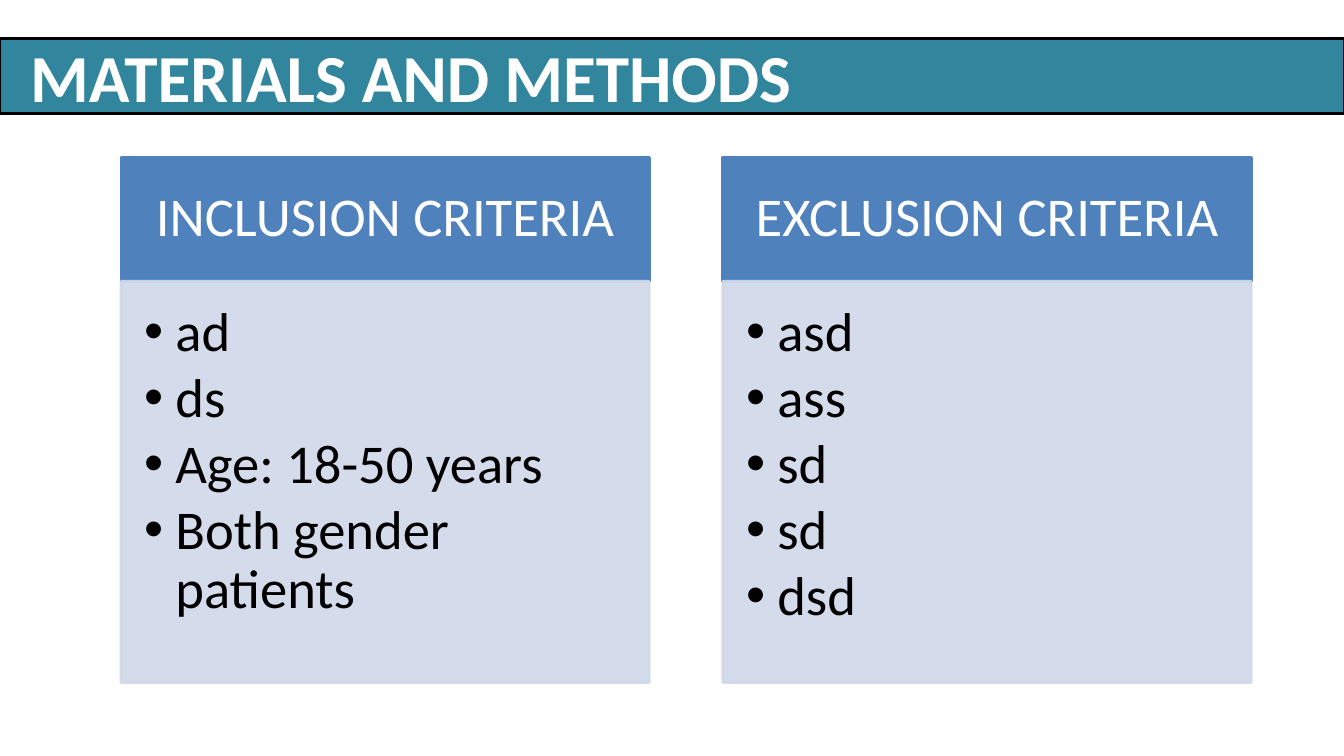
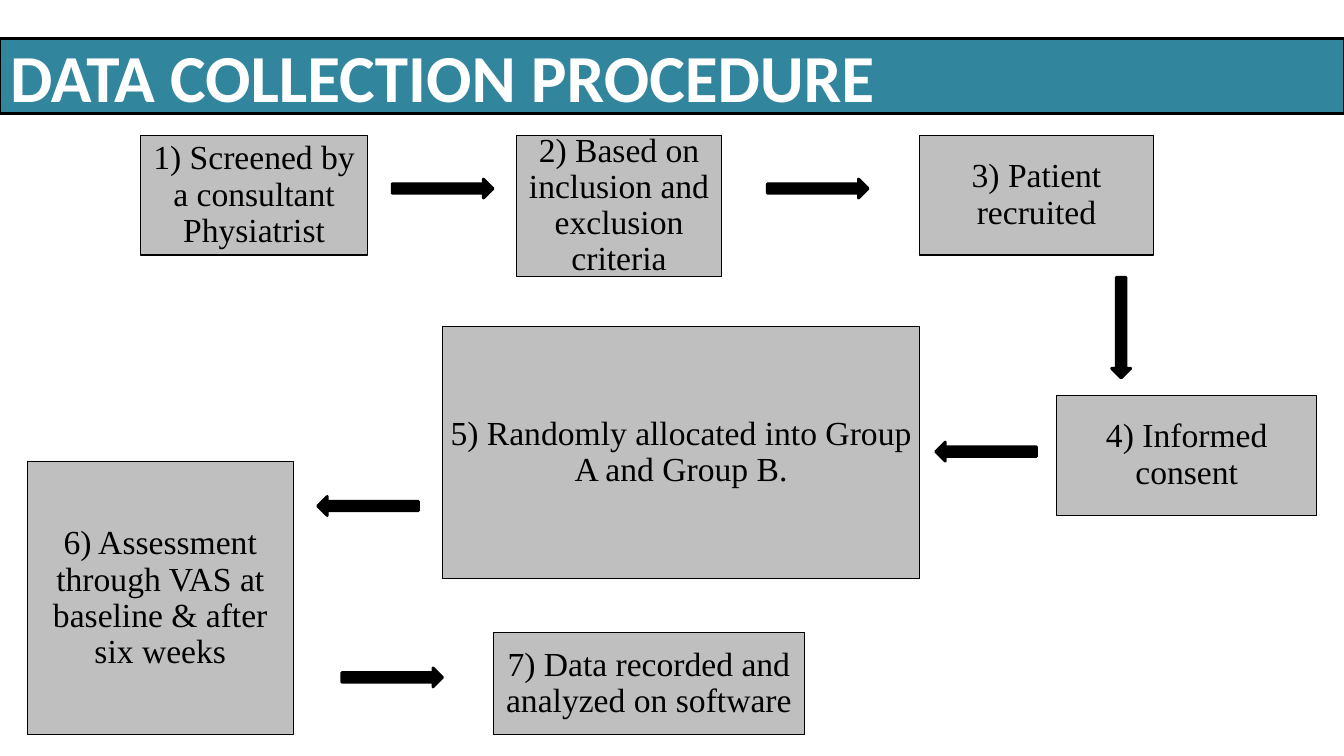
from dataclasses import dataclass

from lxml.etree import SubElement
from pptx import Presentation
from pptx.dml.color import RGBColor as RGB
from pptx.enum.shapes import MSO_SHAPE as Shape
from pptx.enum.text import MSO_ANCHOR as Anchor, MSO_AUTO_SIZE as Auto, PP_ALIGN as Align
from pptx.oxml.ns import qn
from pptx.util import Inches, Pt


@dataclass(frozen=True)
class Theme:
    band: str = "31859C"
    head: str = "4F81BD"
    body: str = "D0D8E8"
    step: str = "BFBFBF"
    ink: str = "000000"
    white: str = "FFFFFF"
    sans: str = "Calibri"
    serif: str = "Times New Roman"
    title_pt: int = 48
    card_pt: int = 39
    step_pt: int = 24


T = Theme()
WIDE, HIGH = 13.33, 7.5

# Content: title, its left inset, and the parts below
CARDS = [
    ("INCLUSION CRITERIA", ["ad", "ds", "Age: 18-50 years", "Both gender patients"]),
    ("EXCLUSION CRITERIA", ["asd", "ass", "sd", "sd", "dsd"]),
]
STEPS = [  # text, (left, top, width, height)
    ("Screened by a consultant Physiatrist", (1.39, 1.34, 2.26, 1.19)),
    ("Based on inclusion and exclusion criteria", (5.12, 1.34, 2.04, 1.4)),
    ("Patient recruited", (9.12, 1.34, 2.32, 1.19)),
    ("Informed consent", (10.48, 3.92, 2.58, 1.19)),
    ("Randomly allocated into Group A and Group B.", (4.39, 3.24, 4.73, 2.5)),
    ("Assessment through VAS at baseline & after six weeks", (0.27, 4.58, 2.64, 2.71)),
    ("Data recorded and analyzed on software", (4.89, 6.27, 3.09, 1.02)),
]
ARROWS = [  # centre x, centre y, turn in degrees
    (4.39, 1.87, 0), (8.11, 1.87, 0), (11.12, 3.25, 90),
    (9.78, 4.48, 180), (3.65, 5.02, 180), (3.89, 6.72, 0),
]

# Layout
BAND = (0, 0.38, WIDE, 0.75)
CARD_X, CARD_Y, CARD_W, CARD_GAP = 1.2, 1.56, 5.24, 0.73
HEAD_H, BODY_H = 1.23, 3.98
ARROW_W, ARROW_H = 1, 0.19


def paint(shape, fill, line, width, alpha=None):
    shape.fill.solid()
    shape.fill.fore_color.rgb = RGB.from_string(fill)
    shape.line.color.rgb = RGB.from_string(line)
    shape.line.width = Pt(width)
    if alpha:
        for color in shape.element.spPr.iter(qn("a:srgbClr")):
            SubElement(color, qn("a:alpha"), val=str(alpha * 1000))


def draw(slide, kind, at, fill, line, width, alpha=None):
    shape = slide.shapes.add_shape(kind, *map(Inches, at))
    shape.shadow.inherit = False
    paint(shape, fill, line, width, alpha)
    return shape


def bullet(para, after=5, indent=0.31):
    para.space_after = Pt(after)
    props = para._p.get_or_add_pPr()
    props.set("marL", str(Inches(indent)))
    props.set("indent", str(-Inches(indent)))
    SubElement(props, qn("a:buFont"), typeface="Arial")
    SubElement(props, qn("a:buChar"), char="•")


def write(shape, lines, size, font, color, inset, align=Align.CENTER,
          anchor=Anchor.MIDDLE, space=0.9, bold=False, dots=False):
    frame = shape.text_frame
    frame.word_wrap = True
    frame.auto_size = Auto.NONE
    frame.vertical_anchor = anchor
    (frame.margin_left, frame.margin_top,
     frame.margin_right, frame.margin_bottom) = map(Inches, inset)
    for i, line in enumerate(lines):
        para = frame.add_paragraph() if i else frame.paragraphs[0]
        para.alignment, para.line_spacing = align, space
        if dots:
            bullet(para)
        run = para.add_run()
        run.text = line
        run.font.size, run.font.name, run.font.bold = Pt(size), font, bold
        run.font.color.rgb = RGB.from_string(color)


def start(deck, text, left):
    """Add a slide whose title is the full-width band."""
    slide = deck.slides.add_slide(deck.slide_layouts[5])
    title = slide.shapes.title
    title.left, title.top, title.width, title.height = map(Inches, BAND)
    paint(title, T.band, T.ink, 2)
    write(title, [text], T.title_pt, T.sans, T.white, (left, 0.05, 0.1, 0.05),
          Align.LEFT, space=1.0, bold=True)
    return slide


def criteria(deck):
    slide = start(deck, "MATERIALS AND METHODS", 0.3)
    for col, (name, items) in enumerate(CARDS):
        x = CARD_X + col * (CARD_W + CARD_GAP)
        head = draw(slide, Shape.RECTANGLE, (x, CARD_Y, CARD_W, HEAD_H),
                    T.head, T.head, 2)
        write(head, [name], T.card_pt, T.sans, T.white, (0.3, 0.17, 0.3, 0.17))
        body = draw(slide, Shape.RECTANGLE, (x, CARD_Y + HEAD_H, CARD_W, BODY_H),
                    T.body, T.body, 2, alpha=90)
        write(body, items, T.card_pt, T.sans, T.ink, (0.23, 0.23, 0.3, 0.34),
              Align.LEFT, Anchor.TOP, dots=True)


def procedure(deck):
    slide = start(deck, "DATA COLLECTION PROCEDURE", 0.1)
    for num, (text, at) in enumerate(STEPS, 1):
        box = draw(slide, Shape.RECTANGLE, at, T.step, T.ink, 0.75)
        write(box, [f"{num}) {text}"], T.step_pt, T.serif, T.ink, (0.07,) * 4)
    for x, y, turn in ARROWS:
        at = (x - ARROW_W / 2, y - ARROW_H / 2, ARROW_W, ARROW_H)
        draw(slide, Shape.RIGHT_ARROW, at, T.ink, T.ink, 2).rotation = turn


def main():
    deck = Presentation()
    deck.slide_width, deck.slide_height = Inches(WIDE), Inches(HIGH)
    criteria(deck)
    procedure(deck)
    deck.save("out.pptx")


if __name__ == "__main__":
    main()
